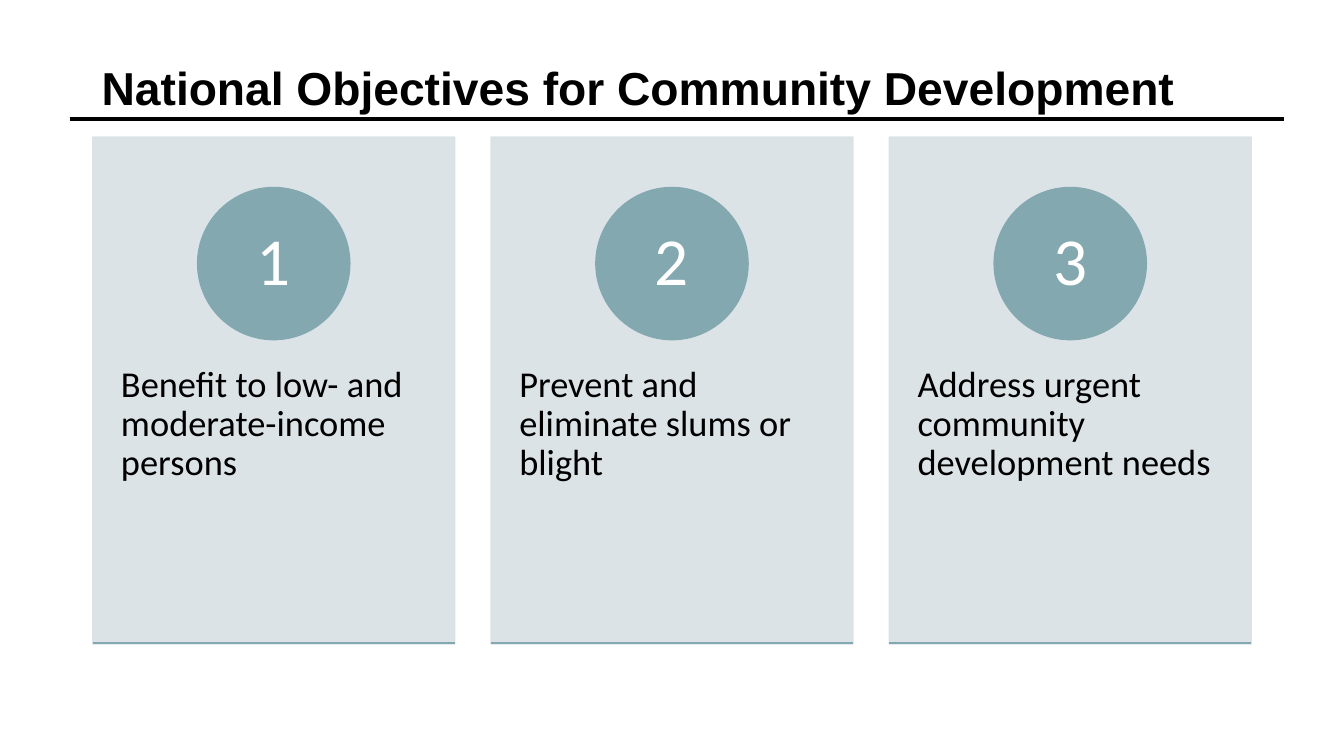
from pptx import Presentation
from pptx.dml.color import RGBColor
from pptx.enum.shapes import MSO_CONNECTOR, MSO_SHAPE
from pptx.enum.text import MSO_ANCHOR, PP_ALIGN
from pptx.oxml.ns import qn
from pptx.util import Inches, Pt
from lxml import etree

LINE = MSO_CONNECTOR.STRAIGHT
RECT, OVAL = MSO_SHAPE.RECTANGLE, MSO_SHAPE.OVAL
TOP, MID, LOW = MSO_ANCHOR.TOP, MSO_ANCHOR.MIDDLE, MSO_ANCHOR.BOTTOM
LEFT, CENTER = PP_ALIGN.LEFT, PP_ALIGN.CENTER

THEME = {
    "ink": RGBColor(0x00, 0x00, 0x00),
    "white": RGBColor(0xFF, 0xFF, 0xFF),
    "card": RGBColor(0xD9, 0xE1, 0xE4),
    "teal": RGBColor(0x83, 0xA8, 0xB0),
    "head": "Arial", "body": "Calibri",
    "title": 33, "text": 26, "num": 48,
}
GOALS = [
    "Benefit to low- and moderate-income persons",
    "Prevent and eliminate slums or blight",
    "Address urgent community development needs",
]

# Grid of cards
X, Y = 0.92, 1.36
WIDE, HIGH = 3.59, 5.03
STEP = 3.95
DISC = 1.51


def write(shape, text, font=THEME["body"], size=THEME["text"], color=THEME["ink"],
          bold=False, align=LEFT, anchor=TOP, pad=(0.1, 0.05), after=0):
    frame = shape.text_frame
    frame.word_wrap = True
    frame.vertical_anchor = anchor
    frame.margin_left = frame.margin_right = Inches(pad[0])
    frame.margin_top = frame.margin_bottom = Inches(pad[1])
    para = frame.paragraphs[0]
    para.text = text
    para.alignment = align
    para.line_spacing = 0.9
    para.space_after = Pt(after)
    para.font.name, para.font.size = font, Pt(size)
    para.font.bold, para.font.color.rgb = bold, color


def rule(x, y, end, color, width):
    line = slide.shapes.add_connector(LINE, Inches(x), Inches(y), Inches(end), Inches(y))
    line.line.color.rgb = color
    line.line.width = Pt(width)
    etree.SubElement(line._element.spPr, qn("a:effectLst"))


deck = Presentation()
deck.slide_width, deck.slide_height = Inches(13.33), Inches(7.5)
slide = deck.slides.add_slide(deck.slide_layouts[6])

# Title and its rule
rule(0.69, 1.18, 12.74, THEME["ink"], 3)
title = slide.shapes.add_textbox(Inches(0.91), Inches(0.54), Inches(11.5), Inches(0.65))
write(title, "National Objectives for Community Development", font=THEME["head"],
      size=THEME["title"], bold=True, anchor=LOW)

# Numbered cards
for i, goal in enumerate(GOALS):
    x = X + i * STEP
    card = slide.shapes.add_shape(RECT, Inches(x), Inches(Y), Inches(WIDE), Inches(HIGH))
    disc = slide.shapes.add_shape(OVAL, Inches(x + (WIDE - DISC) / 2), Inches(Y + 0.5),
                                  Inches(DISC), Inches(DISC))
    for shape, color in ((card, THEME["card"]), (disc, THEME["teal"])):
        shape.shadow.inherit = False
        shape.fill.solid()
        shape.fill.fore_color.rgb = color
        shape.line.color.rgb = color
        shape.line.width = Pt(1)
    # Card fill and edge are slightly see-through
    for tint in card._element.spPr.iter(qn("a:srgbClr")):
        etree.SubElement(tint, qn("a:alpha"), val="90000")

    write(disc, str(i + 1), size=THEME["num"], color=THEME["white"], align=CENTER,
          anchor=MID, pad=(0.12, 0.01))
    label = slide.shapes.add_textbox(Inches(x), Inches(3.27), Inches(WIDE), Inches(3.02))
    write(label, goal, pad=(0.28, 0.36), after=9)
    rule(x, Y + HIGH - 0.01, x + WIDE, THEME["teal"], 1)

deck.save("out.pptx")
